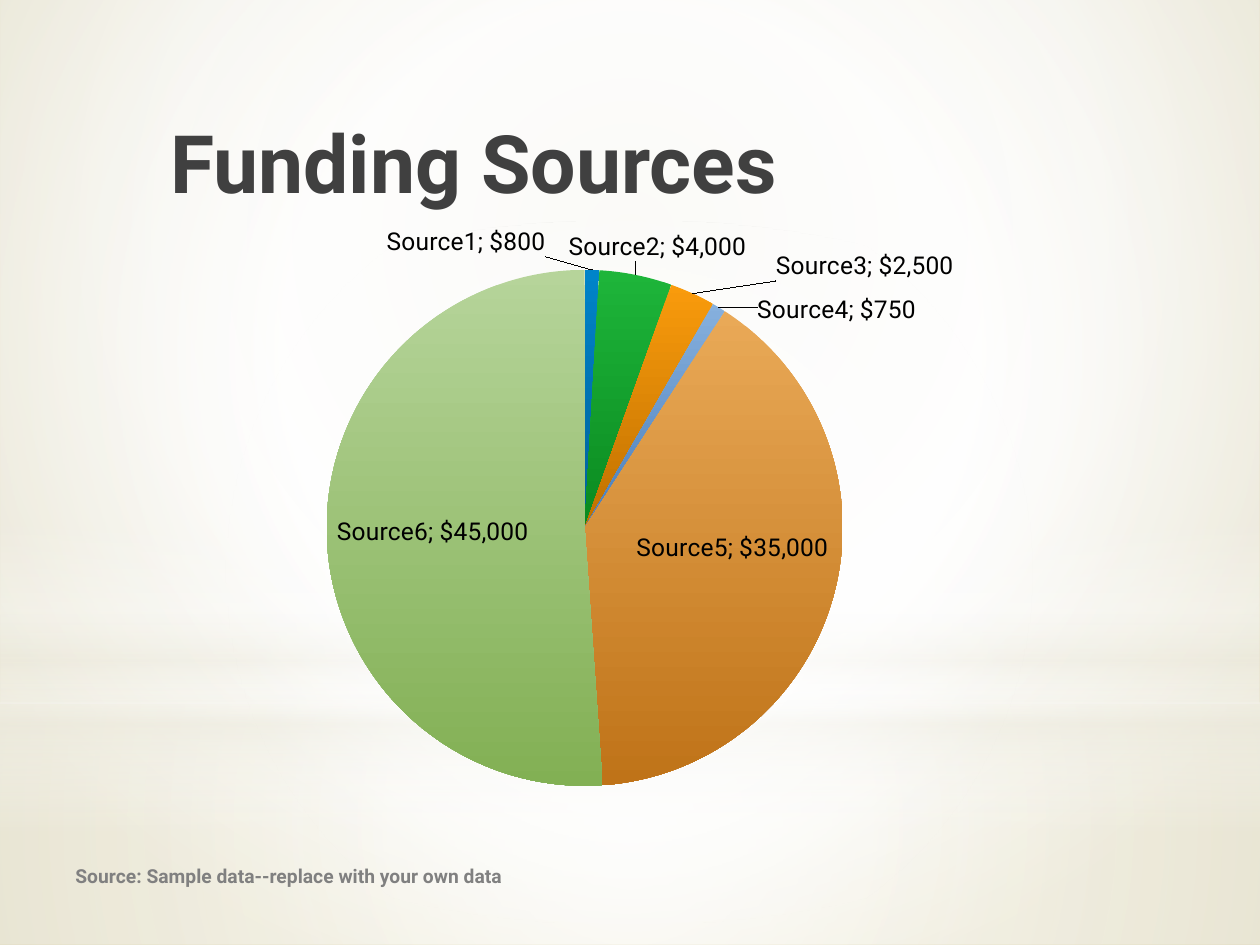
import pptx
import pptx.util
import pptx.chart.data
import pptx.dml.color
import pptx.enum.chart
import pptx.enum.shapes
import pptx.enum.text
import pptx.oxml
import pptx.oxml.ns

WIDTH, HEIGHT = 10, 7.5
FONT = "Roboto"
SHAPES = pptx.enum.shapes.MSO_SHAPE
ANCHOR = pptx.enum.text.MSO_ANCHOR
LABEL = pptx.enum.chart.XL_LABEL_POSITION

# Name, value, top colour, bottom colour, label position, label shift (shares of the chart)
SOURCES = [
    ("Source1", 800, "0084C9", "00609A", LABEL.OUTSIDE_END, (-0.11, -0.01)),
    ("Source2", 4000, "1EB53A", "0A8A20", LABEL.OUTSIDE_END, (-0.06, -0.01)),
    ("Source3", 2500, "F99B0C", "BF7000", LABEL.OUTSIDE_END, (0.07, -0.01)),
    ("Source4", 750, "86B0DD", "4A7EBB", LABEL.OUTSIDE_END, (0.03, 0.04)),
    ("Source5", 35000, "E9A957", "BF7318", LABEL.CENTER, (0.02, -0.02)),
    ("Source6", 45000, "B6D49A", "82B054", LABEL.CENTER, (-0.02, 0)),
]

# Shape, box, gradient stops (position, colour, opacity), focus or None for top to bottom
CENTRE = (50, 50, 50, 50)
LAYERS = [
    (SHAPES.RECTANGLE, (0, 5.58, WIDTH, 1.92),
     [(0, "FFFFFF", 91), (37, "FFFFFF", 76), (100, "EEECE1", 79)], CENTRE),
    (SHAPES.RECTANGLE, (0, 0, WIDTH, 5.58),
     [(0, "FFFFFF", 83), (48, "FFFFFF", 83), (100, "EEECE1", 83)], CENTRE),
    (SHAPES.RECTANGLE, (0, 4.12, WIDTH, 2.5),
     [(0, "FFFFFF", 0), (29, "FFFFFF", 30), (45, "EEECE1", 40),
      (55, "FFFFFF", 26), (65, "EEECE1", 60), (100, "FFFFFF", 0)], None),
    (SHAPES.OVAL, (0, 1.75, WIDTH, 5.58),
     [(0, "FFFFFF", 100), (56, "FFFFFF", 0)], CENTRE),
]


def colour(code):
    return pptx.dml.color.RGBColor.from_string(code)


def inches(box):
    return [pptx.util.Inches(length) for length in box]


def set_gradient(fill, element, stops, focus=None):
    """Fill with stops that carry opacity, around a focus or from top to bottom."""
    fill.gradient()
    grad = element.find(".//" + pptx.oxml.ns.qn("a:gradFill"))
    for child in list(grad):
        grad.remove(child)
    marks = "".join(
        f'<a:gs pos="{at * 1000}"><a:srgbClr val="{code}">'
        f'<a:alpha val="{opacity * 1000}"/></a:srgbClr></a:gs>'
        for at, code, opacity in stops)
    if focus:
        sides = " ".join(f'{side}="{share * 1000}"' for side, share in zip("ltrb", focus))
        course = f'<a:path path="circle"><a:fillToRect {sides}/></a:path>'
    else:
        course = '<a:lin ang="5400000" scaled="0"/>'
    space = pptx.oxml.ns.nsdecls("a")
    holder = pptx.oxml.parse_xml(
        f"<a:gradFill {space}><a:gsLst>{marks}</a:gsLst>{course}</a:gradFill>")
    for child in list(holder):
        grad.append(child)


def chart_layout(**values):
    items = "".join(f'<c:{name} val="{value}"/>' for name, value in values.items())
    space = pptx.oxml.ns.nsdecls("c")
    return pptx.oxml.parse_xml(
        f"<c:layout {space}><c:manualLayout>{items}</c:manualLayout></c:layout>")


def set_font(font, size, code, bold=False):
    font.name, font.size, font.bold = FONT, pptx.util.Pt(size), bold
    font.color.rgb = colour(code)


def write_text(shape, text, size, code, bold=True, anchor=ANCHOR.TOP, top=0.05):
    frame = shape.text_frame
    frame.word_wrap = True
    frame.auto_size = pptx.enum.text.MSO_AUTO_SIZE.NONE
    frame.vertical_anchor = anchor
    frame.margin_top = pptx.util.Inches(top)
    para = frame.paragraphs[0]
    para.alignment = pptx.enum.text.PP_ALIGN.LEFT
    span = para.add_run()
    span.text = text
    set_font(span.font, size, code, bold)


def add_backdrop(page):
    set_gradient(page.background.fill, page.element,
                 [(0, "E7E4D4", 100), (60, "FFFFFF", 100), (100, "D5CC9F", 100)],
                 (20, 10, 20, 60))
    for kind, box, stops, focus in LAYERS:
        layer = page.shapes.add_shape(kind, *inches(box))
        layer.shadow.inherit = False
        layer.line.fill.background()
        set_gradient(layer.fill, layer.element, stops, focus)


def add_title(page, box, text):
    title = page.shapes.title
    title.left, title.top, title.width, title.height = inches(box)
    write_text(title, text, 46, "404040", top=0.09)
    # Bring the title in front of the backdrop
    title.element.getparent().append(title.element)


def add_funding_pie(page, box):
    data = pptx.chart.data.CategoryChartData(number_format='"$"#,##0')
    data.categories = [source[0] for source in SOURCES]
    data.add_series("Series 1", [source[1] for source in SOURCES])
    chart = page.shapes.add_chart(
        pptx.enum.chart.XL_CHART_TYPE.PIE, *inches(box), data).chart
    chart.has_title = chart.has_legend = False
    set_font(chart.font, 18, "000000")
    chart.plots[0].vary_by_categories = True

    # Place of the pie within the chart
    qn = pptx.oxml.ns.qn
    area = chart.element.find(".//" + qn("c:plotArea"))
    for old in area.findall(qn("c:layout")):
        area.remove(old)
    area.insert(0, chart_layout(layoutTarget="inner", xMode="edge", yMode="edge",
                                x=0.23, y=0.09, w=0.45, h=0.88))

    series = chart.plots[0].series[0]
    labels = series.data_labels
    labels.show_value = labels.show_category_name = True
    labels.number_format, labels.number_format_is_linked = '"$"#,##0', False
    set_font(labels.font, 14, "000000")

    # Slices and their labels
    for index, (_, _, upper, lower, position, _) in enumerate(SOURCES):
        point = series.points[index]
        fill = point.format.fill
        fill.gradient()
        fill.gradient_angle = 270
        for stop, code in zip(fill.gradient_stops, (upper, lower)):
            stop.color.rgb = colour(code)
        point.format.line.fill.background()
        set_font(point.data_label.font, 14, "000000")
        point.data_label.position = position
    for mark, source in zip(area.iter(qn("c:dLbl")), SOURCES):
        mark.find(qn("c:showCatName")).set("val", "1")
        across, down = source[-1]
        mark.insert(1, chart_layout(x=across, y=down))
        space = pptx.oxml.ns.nsdecls("c")
        mark.append(pptx.oxml.parse_xml(f"<c:separator {space}>; </c:separator>"))


def add_source_note(page, box, text):
    note = page.shapes.add_textbox(*inches(box))
    write_text(note, text, 11, "808080", anchor=ANCHOR.MIDDLE)


def main():
    deck = pptx.Presentation()
    deck.slide_width, deck.slide_height = inches((WIDTH, HEIGHT))
    page = deck.slides.add_slide(deck.slide_layouts.get_by_name("Title Only"))
    add_backdrop(page)
    add_title(page, (1.25, 0.81, 7.12, 1.25), "Funding Sources")
    add_funding_pie(page, (0.5, 1.72, 9.1, 4.66))
    add_source_note(page, (0.5, 6.75, 6.08, 0.4),
                    "Source: Sample data--replace with your own data")
    deck.save("out.pptx")


if __name__ == "__main__":
    main()
